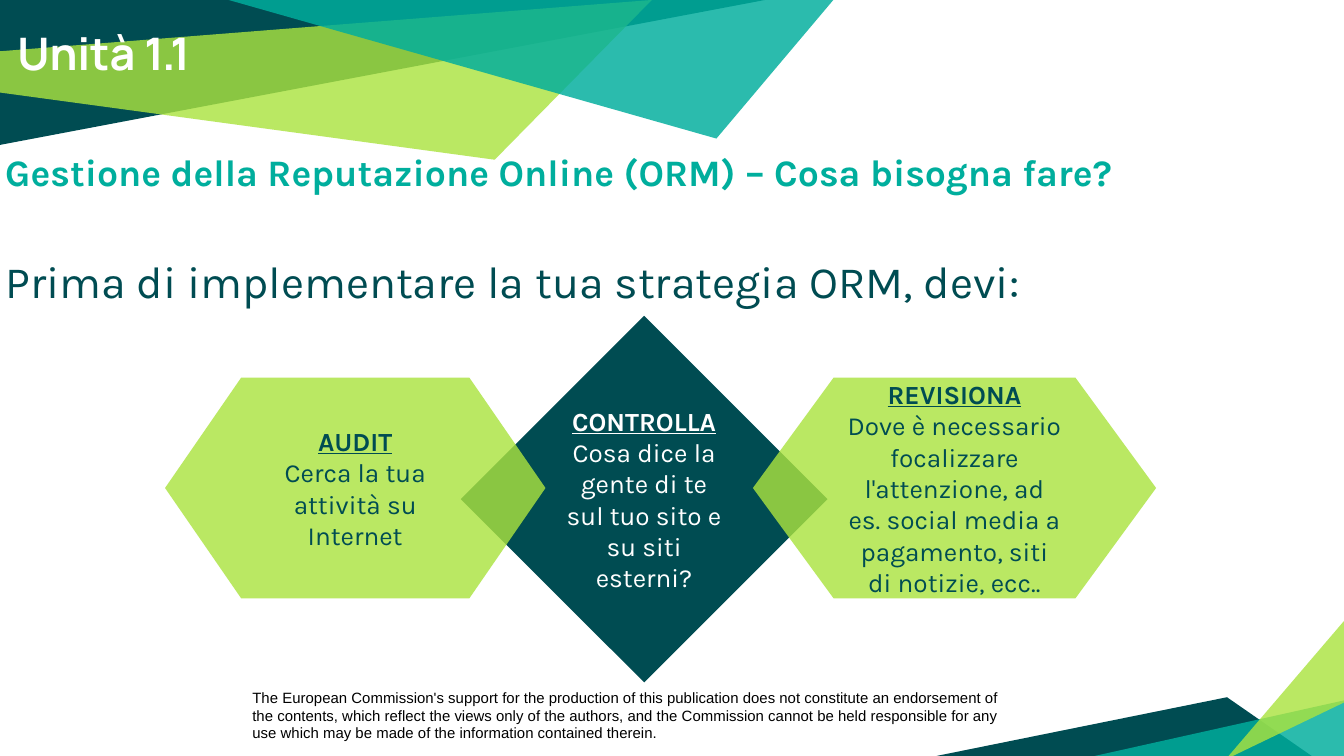
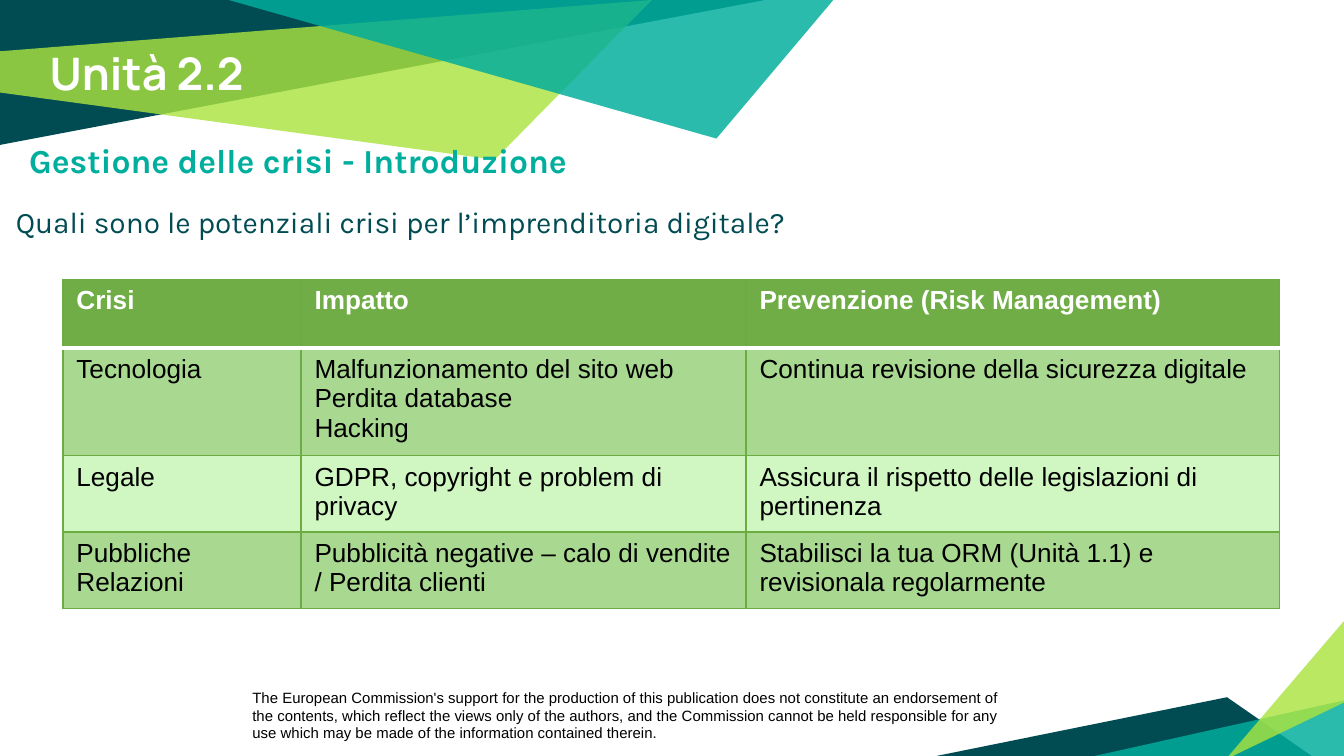
from lxml import etree
from pptx import Presentation
from pptx import util as u
from pptx.dml import color
from pptx.enum import shapes, text
from pptx.oxml import ns

COLORS = {
    "petrol": "004C52",
    "teal": "00AE9D",
    "lime": "ABE33F",
    "white": "FFFFFF",
    "black": "000000",
    "header": "70AD47",
    "border": "6DAC43",
    "band": "A9D991",
    "pale": "D0F6C2",
}
SLIDE_WIDTH, SLIDE_HEIGHT = 25.4, 14.29
INSET = 0.25
BANDS = [
    ("petrol", 100, [(0, 0), (0, 2.74), (14.46, 0)]),
    ("lime", 81, [(0, 0.97), (0, 1.75), (9.35, 3.02), (12.32, 0)]),
    ("petrol", 100, [(17.7, SLIDE_HEIGHT), (24.79, SLIDE_HEIGHT), (23.19, 13.18)]),
    ("teal", 83, [(SLIDE_WIDTH, 13.24), (SLIDE_WIDTH, SLIDE_HEIGHT), (20.69, SLIDE_HEIGHT)]),
    ("lime", 81, [(SLIDE_WIDTH, 13.28), (SLIDE_WIDTH, 11.74),
                  (23.22, SLIDE_HEIGHT), (23.3, SLIDE_HEIGHT)]),
    ("teal", 83, [(4.32, 0), (13.54, 2.62), (15.75, 0)]),
]
DISCLAIMER = (
    "The European Commission's support for the production of this publication does not "
    "constitute an endorsement of the contents, which reflect the views only of the authors, "
    "and the Commission cannot be held responsible for any use which may be made of the "
    "information contained therein."
)
CRISES = [
    ["Crisi", "Impatto", "Prevenzione (Risk Management)"],
    ["Tecnologia", "Malfunzionamento del sito web\nPerdita database\nHacking",
     "Continua revisione della sicurezza digitale"],
    ["Legale", "GDPR, copyright e problem di privacy",
     "Assicura il rispetto delle legislazioni di pertinenza"],
    ["Pubbliche Relazioni", "Pubblicità negative – calo di vendite / Perdita clienti",
     "Stabilisci la tua ORM (Unità 1.1) e revisionala regolarmente"],
]


def rgb(name):
    return color.RGBColor.from_string(COLORS[name])


def paint(shape, name, opacity=100):
    shape.shadow.inherit = False
    shape.line.fill.background()
    shape.fill.solid()
    shape.fill.fore_color.rgb = rgb(name)
    if opacity < 100:
        tint = shape.fill._xPr.find(".//" + ns.qn("a:srgbClr"))
        etree.SubElement(tint, ns.qn("a:alpha")).set("val", str(opacity * 1000))


def style(paragraph, font, size, hue, bold=False, underline=False):
    paragraph.font.name = font
    paragraph.font.size = u.Pt(size)
    paragraph.font.color.rgb = rgb(hue)
    paragraph.font.bold = bold
    paragraph.font.underline = underline


def set_insets(frame, inset):
    frame.margin_left = frame.margin_right = u.Cm(inset)
    frame.margin_top = frame.margin_bottom = u.Cm(inset)


def add_text(slide, box, content, font, size, hue, bold=False):
    frame = slide.shapes.add_textbox(*map(u.Cm, box)).text_frame
    frame.word_wrap = True
    set_insets(frame, INSET)
    frame.text = content
    style(frame.paragraphs[0], font, size, hue, bold)
    return frame


def add_band(slide, hue, opacity, corners):
    start, *rest = [(u.Cm(x), u.Cm(y)) for x, y in corners]
    outline = slide.shapes.build_freeform(*start)
    outline.add_line_segments(rest, close=True)
    paint(outline.convert_to_shape(), hue, opacity)


def add_unit_slide(deck, unit, left, top):
    slide = deck.slides.add_slide(deck.slide_layouts[6])
    footer = add_text(slide, (4.52, 12.88, 14.71, 1.27), DISCLAIMER, "Arial", 8, "black")
    footer.margin_top = footer.margin_bottom = u.Cm(0.13)
    for band in BANDS:
        add_band(slide, *band)
    add_text(slide, (left, top, 20.47, 1.52), unit, "Manrope", 24, "white", True)
    return slide


def add_step(slide, preset, box, fill, opacity, ink, heading, detail):
    step = slide.shapes.add_shape(preset, *map(u.Cm, box))
    paint(step, fill, opacity)
    frame = step.text_frame
    frame.word_wrap = True
    frame.vertical_anchor = text.MSO_ANCHOR.MIDDLE
    set_insets(frame, INSET)
    frame.text = f"{heading}\n{detail}"
    for paragraph, strong in zip(frame.paragraphs, (True, False)):
        paragraph.alignment = text.PP_ALIGN.CENTER
        style(paragraph, "Karla", 14, ink, strong, strong)


def set_border(cell, side, hue, width):
    properties = cell._tc.get_or_add_tcPr()
    edge = etree.SubElement(properties, ns.qn(f"a:ln{side}"), w=str(u.Pt(width)))
    fill = etree.SubElement(edge, ns.qn("a:solidFill"))
    etree.SubElement(fill, ns.qn("a:srgbClr"), val=COLORS[hue])


def add_crisis_table(slide):
    widths = [4.5, 8.41, 10.08]
    heights = [1.3, 1.83, 1.3, 1.3]
    table = slide.shapes.add_table(
        len(CRISES), len(widths), u.Cm(1.19), u.Cm(5.28),
        u.Cm(sum(widths)), u.Cm(sum(heights))).table
    for column, width in zip(table.columns, widths):
        column.width = u.Cm(width)
    for i, (row, height) in enumerate(zip(table.rows, heights)):
        row.height = u.Cm(height)
        for cell, content in zip(row.cells, CRISES[i]):
            cell.text = content
            for paragraph in cell.text_frame.paragraphs:
                style(paragraph, "Arial", 14, "black" if i else "white", i == 0)
            for side in "LRTB":
                divider = (i, side) in ((0, "B"), (1, "T"))
                set_border(cell, side, *(("white", 2) if divider else ("border", 0.75)))
            cell.fill.solid()
            cell.fill.fore_color.rgb = rgb(("header", "band", "pale", "band")[i])


def build_reputation_slide(deck):
    slide = add_unit_slide(deck, "Unità 1.1", 0.08, 0.23)
    body = add_text(slide, (-0.15, 2.57, 25.4, 7.67),
                    "Gestione della Reputazione Online (ORM) – Cosa bisogna fare?",
                    "Karla", 20, "teal", True)
    intro = body.add_paragraph()
    intro.text = "Prima di implementare la tua strategia ORM, devi:"
    intro.space_before = u.Pt(32)
    style(intro, "Karla", 24, "petrol")

    hexagon = shapes.MSO_SHAPE.FLOWCHART_PREPARATION
    add_step(slide, shapes.MSO_SHAPE.DIAMOND, (8.71, 5.97, 6.93, 6.93), "petrol", 100, "white",
             "CONTROLLA", "Cosa dice la gente di te sul tuo sito e su siti esterni?")
    add_step(slide, hexagon, (3.12, 7.14, 7.19, 4.17), "lime", 81, "petrol",
             "AUDIT", "Cerca la tua attività su Internet")
    add_step(slide, hexagon, (14.23, 7.14, 7.62, 4.17), "lime", 81, "petrol",
             "REVISIONA", "Dove è necessario focalizzare l'attenzione, ad es. social media "
             "a pagamento, siti di notizie, ecc..")


def build_crisis_slide(deck):
    slide = add_unit_slide(deck, "Unità 2.2", 0.69, 0.61)
    add_text(slide, (0.3, 2.39, 24.64, 1.3), "Gestione delle crisi - Introduzione",
             "Karla", 18, "teal", True)
    add_text(slide, (0.05, 3.61, 24.64, 1.3),
             "Quali sono le potenziali crisi per l’imprenditoria digitale?",
             "Karla", 16, "petrol")
    add_crisis_table(slide)


def main():
    deck = Presentation()
    deck.slide_width = u.Cm(SLIDE_WIDTH)
    deck.slide_height = u.Cm(SLIDE_HEIGHT)
    build_reputation_slide(deck)
    build_crisis_slide(deck)
    deck.save("out.pptx")


if __name__ == "__main__":
    main()
